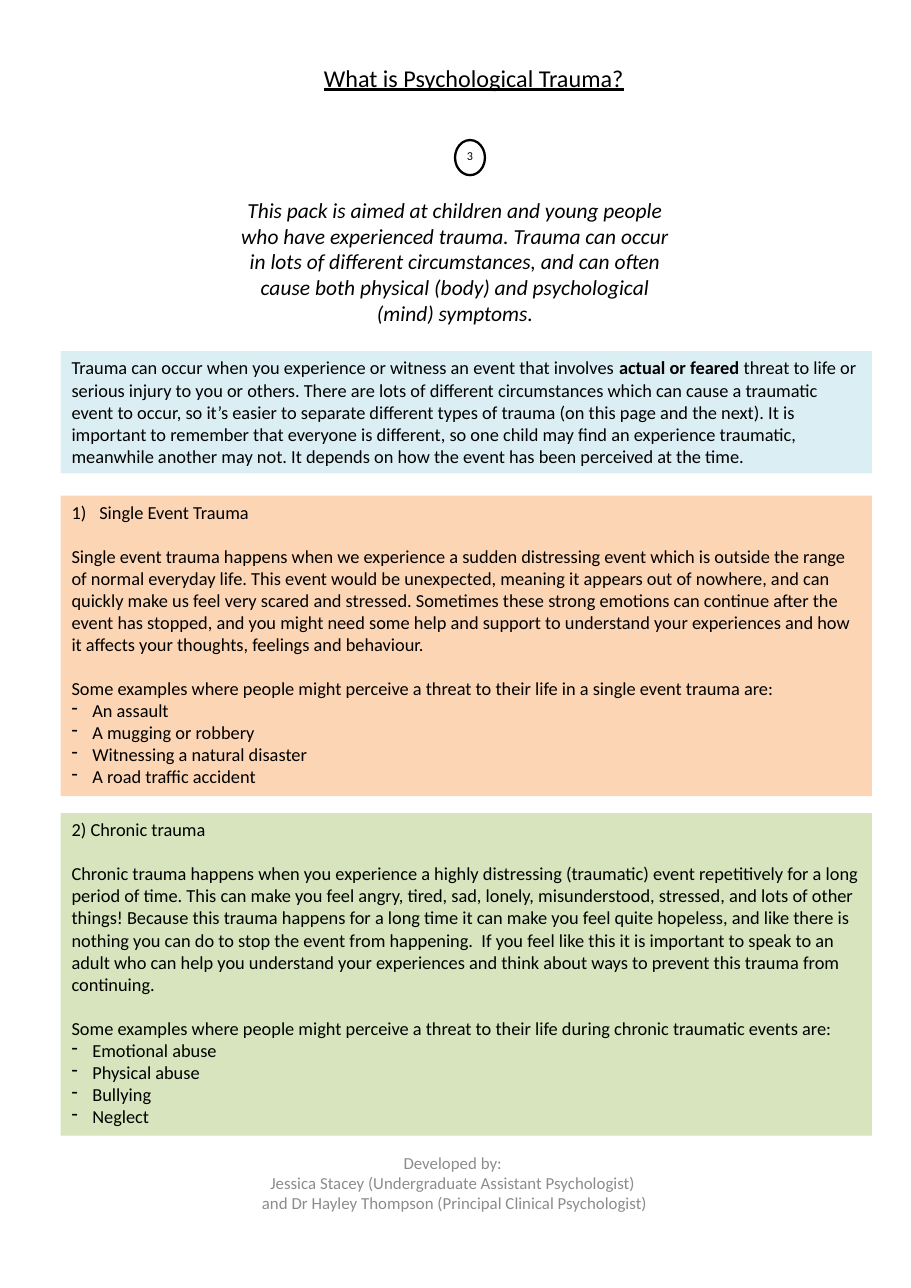
from lxml.etree import SubElement
from pptx import Presentation
from pptx.dml.color import RGBColor
from pptx.enum.shapes import MSO_SHAPE as Shape
from pptx.enum.text import MSO_ANCHOR as Anchor, MSO_AUTO_SIZE as Fit, PP_ALIGN as Align
from pptx.oxml.ns import qn
from pptx.util import Cm, Pt

INK = {"black": "000000", "grey": "8C8C8C", "blue": "DBEEF4",
       "peach": "FCD5B5", "green": "D7E4BD"}
FONT = "Calibri"
LEFT, WIDE = 1.4, 18.7
GAP = Pt(14.4)  # one line of 12 pt text


def color(name):
    return RGBColor.from_string(INK[name])


def add_run(para, text, size, ink="black", bold=False, italic=False, under=False):
    run = para.add_run()
    run.text = text
    font = run.font
    font.name, font.size = FONT, Pt(size)
    font.bold, font.italic, font.underline = bold, italic, under
    font.color.rgb = color(ink)


def next_para(frame, align=Align.LEFT):
    """Return the empty first paragraph, or a new one after it."""
    first = frame.paragraphs[0]
    para = frame.add_paragraph() if first.runs else first
    para.alignment = align
    return para


def set_bullet(para, indent, tag, **attrs):
    props = para._p.get_or_add_pPr()
    props.set("marL", str(Cm(indent)))
    props.set("indent", str(-Cm(indent)))
    SubElement(props, qn(tag), **attrs)


def add_title(slide, box):
    title = slide.shapes.title
    title.left, title.top, title.width, title.height = map(Cm, box)
    frame = title.text_frame
    frame.auto_size, frame.word_wrap = Fit.NONE, True
    frame.vertical_anchor = Anchor.MIDDLE
    add_run(next_para(frame, Align.CENTER), "What is Psychological Trauma?", 15.8, under=True)


def add_badge(slide, box, number):
    """Draw the page number in a ring."""
    ring = slide.shapes.add_shape(Shape.OVAL, *map(Cm, box))
    ring.shadow.inherit = False
    ring.fill.background()
    ring.line.color.rgb = color("black")
    ring.line.width = Pt(1.5)
    frame = ring.text_frame
    frame.margin_left = frame.margin_right = frame.margin_top = 0
    frame.margin_bottom = Cm(0.08)
    frame.word_wrap = False
    frame.vertical_anchor = Anchor.MIDDLE
    add_run(next_para(frame, Align.CENTER), number, 7.9)


def add_text(slide, box, lines, size, anchor=Anchor.TOP, **style):
    frame = slide.shapes.add_textbox(*map(Cm, box)).text_frame
    frame.word_wrap = True
    frame.vertical_anchor = anchor
    for line in lines:
        add_run(next_para(frame, Align.CENTER), line, size, **style)


def add_panel(slide, box, fill):
    """Draw a filled box and return its text frame."""
    panel = slide.shapes.add_shape(Shape.RECTANGLE, *map(Cm, box))
    panel.shadow.inherit = False
    panel.fill.solid()
    panel.fill.fore_color.rgb = color(fill)
    panel.line.fill.background()
    frame = panel.text_frame
    frame.word_wrap = True
    frame.vertical_anchor = Anchor.TOP
    return frame


def add_type(slide, box, fill, head, about, lead, cases, auto=False):
    """Fill a panel with one type of trauma and its examples."""
    frame = add_panel(slide, box, fill)
    para = next_para(frame)
    if auto:
        set_bullet(para, 0.64, "a:buAutoNum", type="arabicParenR")
    add_run(para, head, 12)
    for text in (about, lead):
        para = next_para(frame)
        para.space_before = GAP
        add_run(para, text, 12)
    for case in cases:
        para = next_para(frame)
        set_bullet(para, 0.48, "a:buChar", char="-")
        add_run(para, case, 12)


def build_page(slide):
    add_title(slide, (6.48, 0.64, 8.89, 2.29))
    add_badge(slide, (10.49, 3.23, 0.69, 0.81), "3")
    add_text(slide, (5.18, 4.42, 10.62, 3.25), [
        "This pack is aimed at children and young people who have experienced trauma. "
        "Trauma can occur in lots of different circumstances, and can often cause both "
        "physical (body) and psychological (mind) symptoms."], 14, italic=True)

    para = next_para(add_panel(slide, (LEFT, 8.1, WIDE, 2.82), "blue"))
    add_run(para, "Trauma can occur when you experience or witness an event that involves ", 12)
    add_run(para, "actual or feared ", 12, bold=True)
    add_run(para, "threat to life or serious injury to you or others. There are lots of "
            "different circumstances which can cause a traumatic event to occur, so it’s "
            "easier to separate different types of trauma (on this page and the next). It is "
            "important to remember that everyone is different, so one child may find an "
            "experience traumatic, meanwhile another may not. It depends on how the event has "
            "been perceived at the time.", 12)

    lead = "Some examples where people might perceive a threat to their life "
    add_type(
        slide, (LEFT, 11.43, WIDE, 6.93), "peach", "Single Event Trauma",
        "Single event trauma happens when we experience a sudden distressing event which is "
        "outside the range of normal everyday life. This event would be unexpected, meaning "
        "it appears out of nowhere, and can quickly make us feel very scared and stressed. "
        "Sometimes these strong emotions can continue after the event has stopped, and you "
        "might need some help and support to understand your experiences and how it affects "
        "your thoughts, feelings and behaviour.",
        lead + "in a single event trauma are:",
        ["An assault", "A mugging or robbery", "Witnessing a natural disaster",
         "A road traffic accident"], auto=True)
    add_type(
        slide, (LEFT, 18.75, WIDE, 7.44), "green", "2) Chronic trauma",
        "Chronic trauma happens when you experience a highly distressing (traumatic) event "
        "repetitively for a long period of time. This can make you feel angry, tired, sad, "
        "lonely, misunderstood, stressed, and lots of other things! Because this trauma "
        "happens for a long time it can make you feel quite hopeless, and like there is "
        "nothing you can do to stop the event from happening.  If you feel like this it is "
        "important to speak to an adult who can help you understand your experiences and "
        "think about ways to prevent this trauma from continuing.",
        lead + "during chronic traumatic events are:",
        ["Emotional abuse", "Physical abuse", "Bullying", "Neglect"])

    add_text(slide, (3.71, 26.19, 13.54, 2.18), [
        "Developed by: ", "Jessica Stacey (Undergraduate Assistant Psychologist) ",
        "and Dr Hayley Thompson (Principal Clinical Psychologist)"],
        11, Anchor.MIDDLE, ink="grey")


def main():
    deck = Presentation()
    deck.slide_width, deck.slide_height = Cm(21), Cm(29.7)
    build_page(deck.slides.add_slide(deck.slide_layouts[5]))
    deck.save("out.pptx")


if __name__ == "__main__":
    main()
